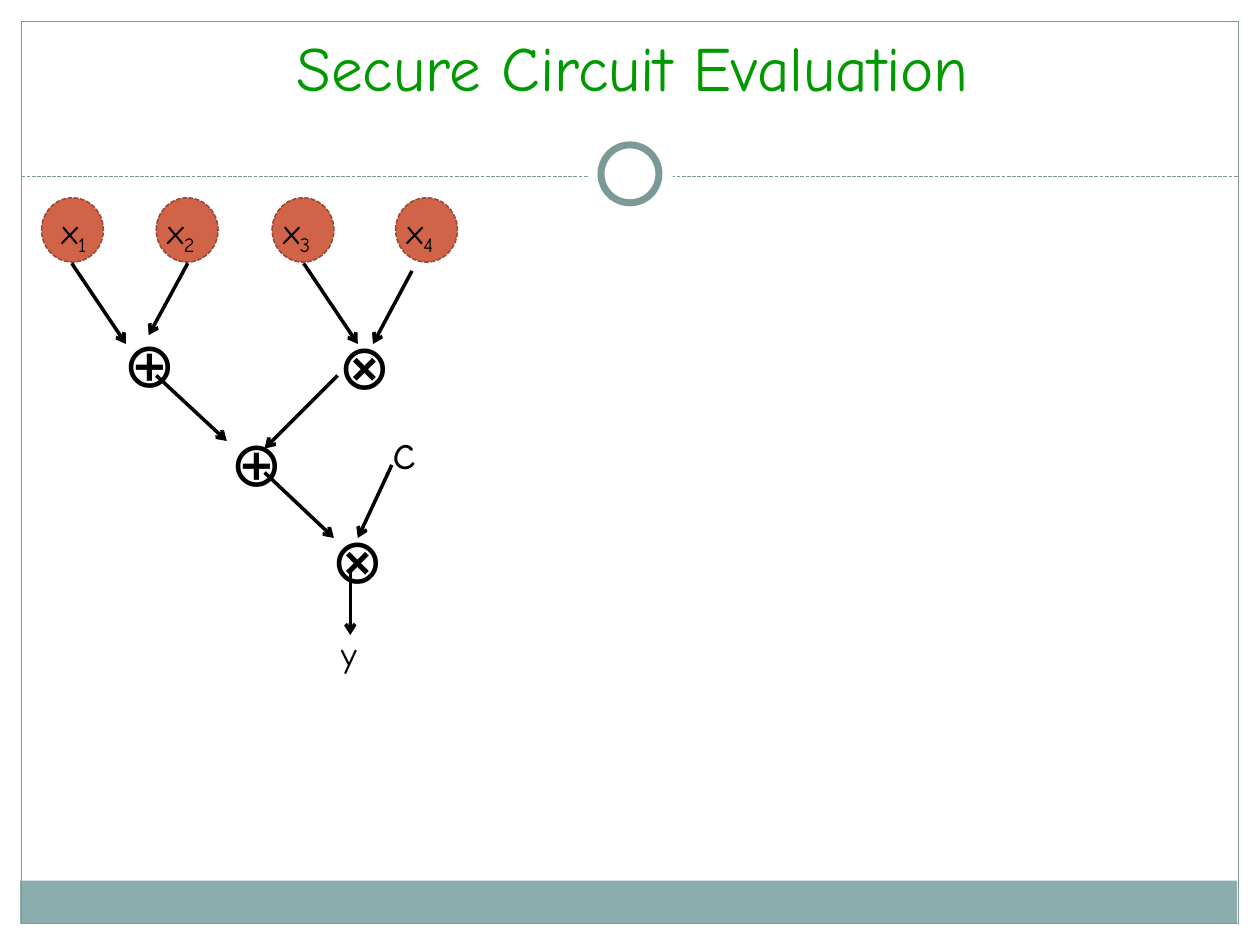
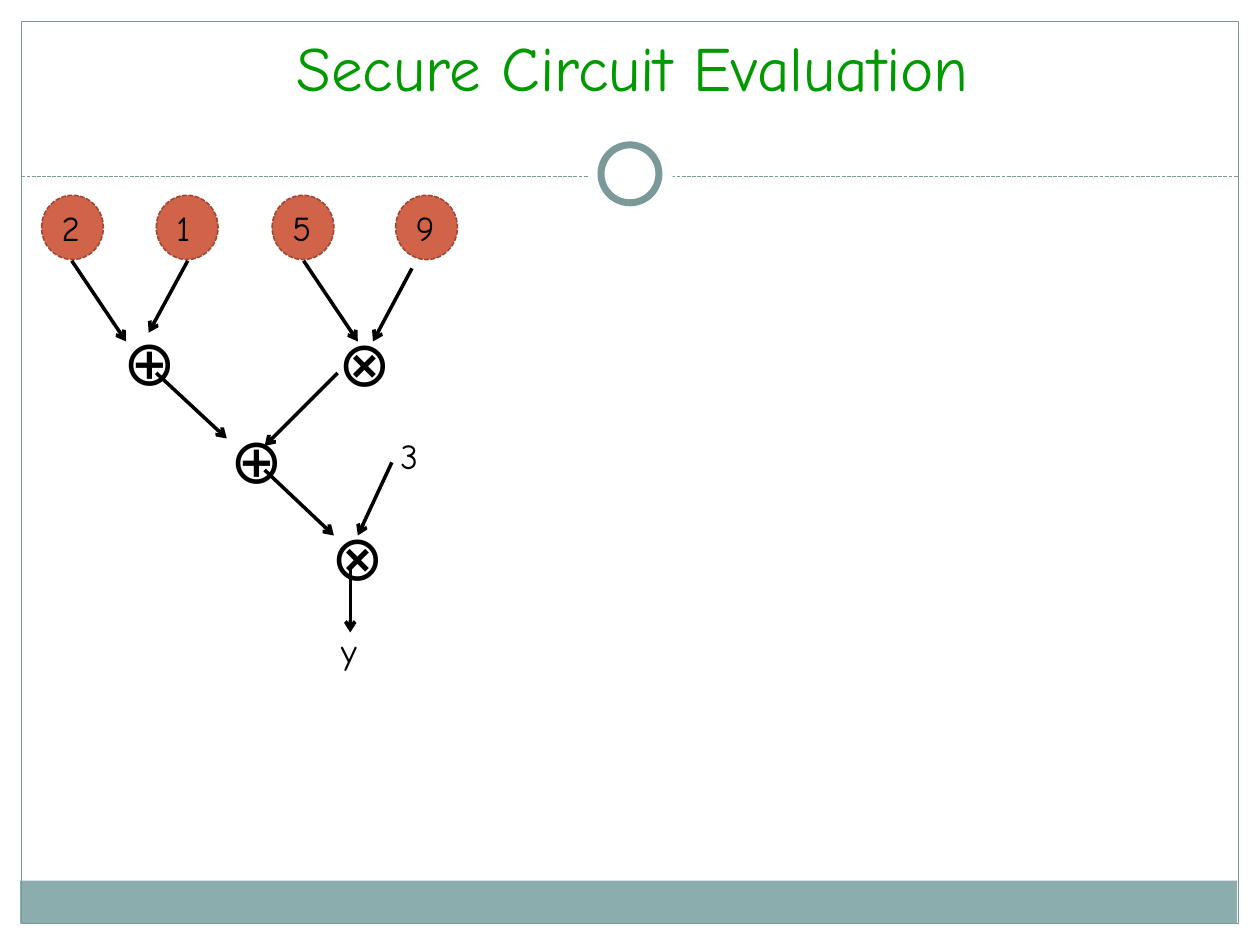
"""Build two slides of a secure circuit evaluation, symbolic and with numbers."""
from lxml.etree import SubElement
from pptx import Presentation
from pptx.dml.color import RGBColor
from pptx.enum.dml import MSO_LINE
from pptx.enum.shapes import MSO_CONNECTOR, MSO_SHAPE
from pptx.enum.text import MSO_ANCHOR, MSO_AUTO_SIZE, PP_ALIGN
from pptx.oxml.ns import qn
from pptx.util import Emu, Pt

FONT = "Comic Neue"
BLACK, WHITE, GREEN = "000000", "FFFFFF", "009900"
TEAL, BAND = "7C999A", "8CADAE"
RUST, RUST_EDGE = "D16349", "9B4936"

CIRCLE_LEFTS = (33, 124, 216, 314)
LABEL_LEFTS = (39, 123, 215, 313)
GATES = (("⊕", 88, 253), ("⊗", 259, 254), ("⊕", 173, 331), ("⊗", 253, 408))
WIRES = (
    (57, 209, 100, 273),
    (149, 209, 118, 266),
    (241, 209, 284, 273),
    (327, 215, 296, 273),
    (124, 298, 180, 350),
    (268, 298, 210, 356),
    (210, 375, 265, 427),
    (311, 369, 284, 427),
    (278, 452, 278, 504),
)


def px(n):
    return Emu(n * 9144)


def rgb(value):
    return RGBColor.from_string(value)


def write(tf, text, size=20, color=BLACK, align=PP_ALIGN.LEFT, sub=""):
    p = tf.paragraphs[0]
    p.alignment = align
    for part, baseline in ((text, 0), (sub, -25000)):
        if part:
            r = p.add_run()
            r.text = part
            r.font.name = FONT
            r.font.size = Pt(size)
            r.font.color.rgb = rgb(color)
            if baseline:
                r.font._element.set("baseline", str(baseline))


class Deck:
    def __init__(self):
        self.prs = Presentation()
        self.prs.slide_width, self.prs.slide_height = px(1000), px(750)
        self.s = None

    def slide(self, title):
        self.s = self.prs.slides.add_slide(self.prs.slide_layouts[5])
        self.shape(MSO_SHAPE.RECTANGLE, 16, 699, 966, 34, fill=BAND)
        self.shape(MSO_SHAPE.RECTANGLE, 17, 17, 966, 716, line=TEAL)
        self.line(17, 140, 983, 140, color=TEAL, width=0.75, dashed=True)
        self.shape(MSO_SHAPE.OVAL, 467, 105, 67, 67, fill=WHITE)
        self.shape(MSO_SHAPE.OVAL, 477, 115, 46, 46, fill=WHITE, line=TEAL, width=4)
        self.title(title)

    def title(self, text):
        sp = self.s.shapes.title
        sp.left, sp.top, sp.width, sp.height = map(px, (20, 18, 964, 87))
        tf = sp.text_frame
        tf.vertical_anchor = MSO_ANCHOR.TOP
        tf.auto_size = MSO_AUTO_SIZE.NONE
        write(tf, text, size=36, color=GREEN, align=PP_ALIGN.CENTER)

    def stroke(self, ln, color, width, dashed):
        ln.color.rgb = rgb(color)
        ln.width = Pt(width)
        if dashed:
            ln.dash_style = MSO_LINE.SQUARE_DOT

    def shape(self, kind, x, y, w, h, fill=None, line=None, width=0.75, dashed=False):
        sp = self.s.shapes.add_shape(kind, *map(px, (x, y, w, h)))
        sp.shadow.inherit = False
        if fill:
            sp.fill.solid()
            sp.fill.fore_color.rgb = rgb(fill)
        else:
            sp.fill.background()
        if line:
            self.stroke(sp.line, line, width, dashed)
        else:
            sp.line.fill.background()

    def line(self, x1, y1, x2, y2, color=BLACK, width=2, dashed=False, arrow=False):
        cxn = self.s.shapes.add_connector(MSO_CONNECTOR.STRAIGHT, *map(px, (x1, y1, x2, y2)))
        self.stroke(cxn.line, color, width, dashed)
        spPr = cxn._element.spPr
        if arrow:
            SubElement(spPr.find(qn("a:ln")), qn("a:tailEnd"), type="arrow")
        SubElement(spPr, qn("a:effectLst"))

    def text(self, text, x, y, w, h, inset=10, **fmt):
        tf = self.s.shapes.add_textbox(*map(px, (x, y, w, h))).text_frame
        tf.word_wrap = True
        tf.auto_size = MSO_AUTO_SIZE.SHAPE_TO_FIT_TEXT
        tf.margin_left = px(inset)
        write(tf, text, **fmt)

    def circuit(self, inputs, dy=0):
        for circle_x, label_x, label in zip(CIRCLE_LEFTS, LABEL_LEFTS, inputs):
            self.shape(MSO_SHAPE.OVAL, circle_x, 157 + dy, 49, 51, fill=RUST,
                       line=RUST_EDGE, width=0.9, dashed=True)
            self.text(x=label_x, y=161 + dy, w=50, h=44, **label)
        for symbol, x, y in GATES:
            self.text(symbol, x, y + dy, 43, 71, size=36)
        for x1, y1, x2, y2 in WIRES:
            self.line(x1, y1 + dy, x2, y2 + dy, arrow=True)
        self.text("y", 261, 497 + dy, 31, 44)


def main():
    deck = Deck()
    deck.slide("Secure Circuit Evaluation")
    deck.circuit([dict(text="x", sub=n) for n in "1234"])
    deck.text("c", 302, 329, 31, 57, size=28)

    deck.slide("Secure Circuit Evaluation")
    deck.circuit([dict(text="2")] + [dict(text=n, inset=17) for n in "159"], dy=-2)
    deck.text("3", 308, 340, 31, 44)
    deck.prs.save("out.pptx")


if __name__ == "__main__":
    main()
